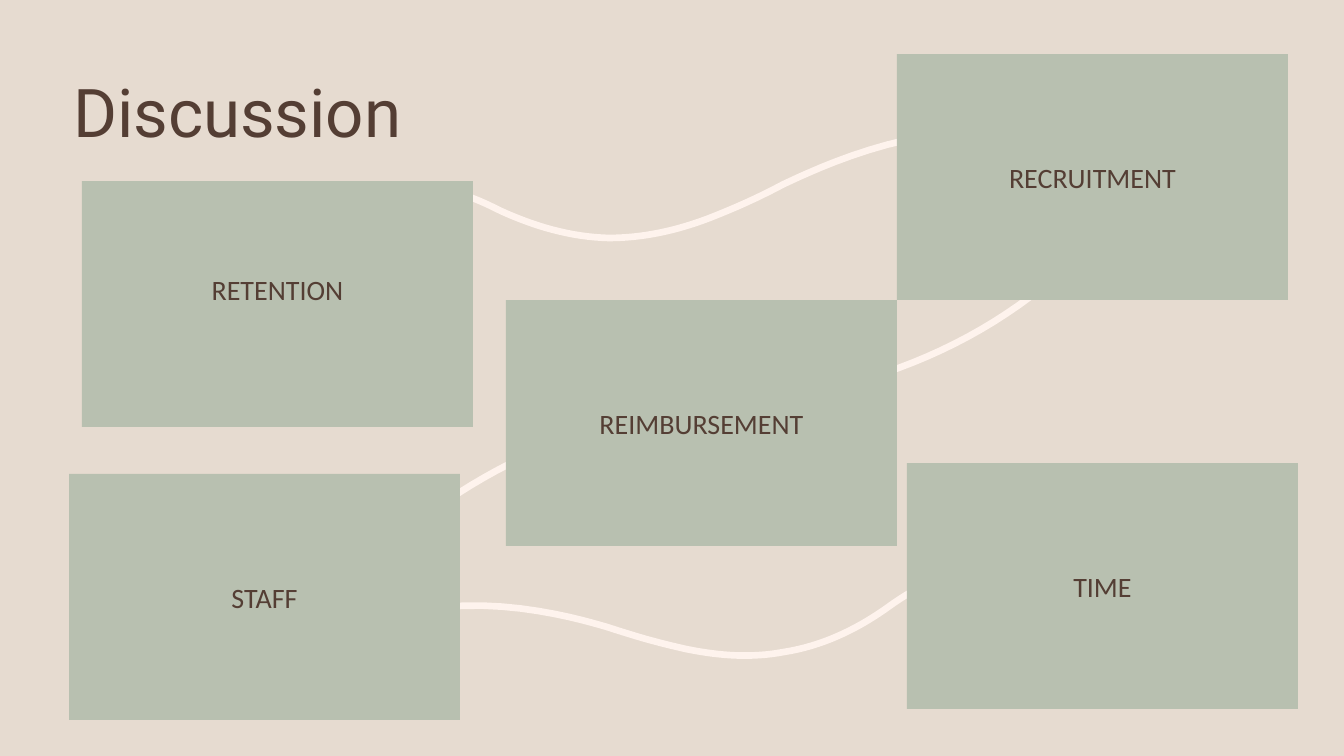
from pptx import Presentation
from pptx.dml.color import RGBColor
from pptx.enum.shapes import MSO_SHAPE as SHAPE
from pptx.enum.text import MSO_ANCHOR as ANCHOR, PP_ALIGN as ALIGN
from pptx.util import Pt

PX = 914400 / 100.8
BOX_W, BOX_H = 391, 246
STEPS = 16
BROWN, SAGE, CREAM, SAND = "543E34", "B8C0B0", "FEF3ED", "E6DBD0"


def px(*values):
    """Turn pixel lengths into EMU."""
    return [round(v * PX) for v in values]


def paint(fill, colour):
    fill.solid()
    fill.fore_color.rgb = RGBColor.from_string(colour)


prs = Presentation()
prs.slide_width, prs.slide_height = px(1344, 756)
s = prs.slides.add_slide(prs.slide_layouts[5])
paint(s.background.fill, SAND)

# Each curve: a start point, then cubic segments of two handles and an end
curves = [
    [(840, 386), (920, 366), (993, 330), (1055, 277)],
    [(589, 431), (513, 456), (449, 494), (392, 543)],
    [(309, 225), (353, 188), (401, 178), (453, 192),
     (470, 196), (485, 203), (501, 211), (534, 226), (570, 237), (609, 238),
     (642, 238), (675, 231), (707, 219), (743, 205), (763, 195), (784, 184),
     (810, 172), (948, 104), (1035, 147)],
    [(927, 584), (911, 591), (898, 600), (884, 610),
     (855, 630), (822, 646), (784, 652), (752, 658), (720, 656), (686, 649),
     (650, 641), (629, 634), (607, 627), (583, 620), (437, 575), (350, 641)],
]
for curve in curves:
    points = []
    for i in range(0, len(curve) - 1, 3):
        a, b, c, d = curve[i:i + 4]
        for step in range(1, STEPS + 1):
            t = step / STEPS
            u = 1 - t
            points.append(px(*(u**3 * a[k] + 3 * u * u * t * b[k]
                               + 3 * u * t * t * c[k] + t**3 * d[k] for k in (0, 1))))
    builder = s.shapes.build_freeform(*px(*curve[0]))
    builder.add_line_segments(points, close=False)
    sp = builder.convert_to_shape()
    sp.shadow.inherit = False
    sp.fill.background()
    paint(sp.line.fill, CREAM)
    sp.line.width = Pt(4.75)

title = s.shapes.title
title.left, title.top, title.width, title.height = px(63, 78, 1008, 75)
title.text = "Discussion"
title.text_frame.vertical_anchor = ANCHOR.MIDDLE
p = title.text_frame.paragraphs[0]
p.alignment = ALIGN.LEFT
p.line_spacing = 0.9
p.font.name, p.font.size = "Roboto", Pt(48)
p.font.color.rgb = RGBColor.from_string(BROWN)

# Label, left, top, and how far the label sits above the middle
topics = [
    ("RETENTION", 82, 181, 15),
    ("RECRUITMENT", 897, 54, 0),
    ("REIMBURSEMENT", 506, 300, 0),
    ("STAFF", 69, 474, 0),
    ("TIME", 907, 463, 0),
]
for label, left, top, lift in topics:
    sp = s.shapes.add_shape(SHAPE.RECTANGLE, *px(left, top, BOX_W, BOX_H))
    sp.shadow.inherit = False
    paint(sp.fill, SAGE)
    sp.line.fill.background()
    tf = sp.text_frame
    tf.word_wrap = True
    tf.vertical_anchor = ANCHOR.MIDDLE
    tf.margin_top, tf.margin_bottom = px(5, 5 + 2 * lift)
    p = tf.paragraphs[0]
    p.text = label
    p.alignment = ALIGN.CENTER
    p.font.name, p.font.size = "Calibri", Pt(20)
    p.font.color.rgb = RGBColor.from_string(BROWN)

prs.save("out.pptx")
